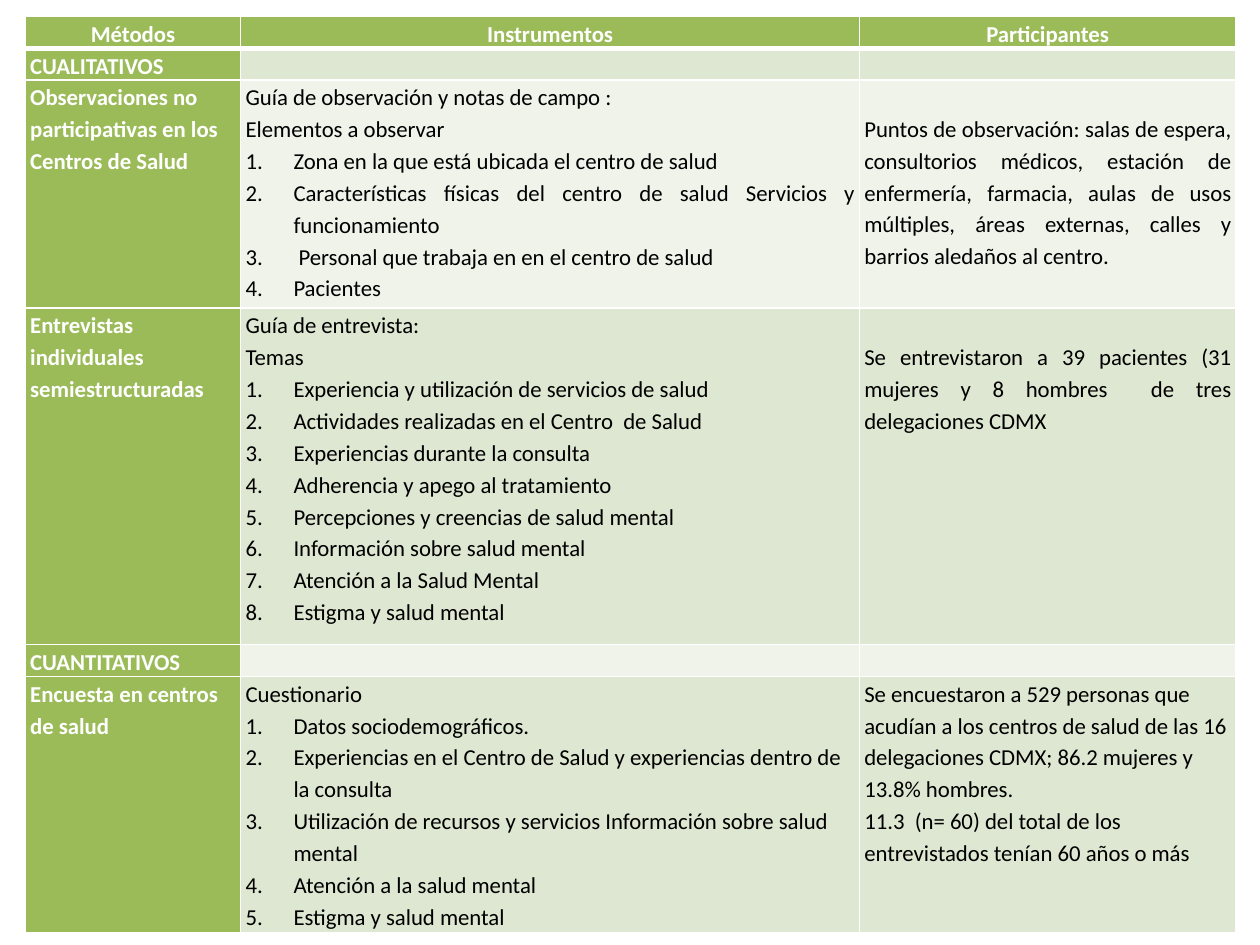
from dataclasses import dataclass

from lxml import etree
from pptx import Presentation
from pptx import util as u
from pptx.dml.color import RGBColor
from pptx.enum import text
from pptx.oxml import ns

LEFT, CENTER, JUSTIFY = text.PP_ALIGN.LEFT, text.PP_ALIGN.CENTER, text.PP_ALIGN.JUSTIFY


@dataclass(frozen=True)
class Theme:
    font: str = "Calibri"
    size: int = 13
    spacing: float = 1.15
    green: str = "9BBB59"
    bands: tuple = ("DEE7D1", "EFF3EA")
    white: str = "FFFFFF"
    black: str = "000000"
    border: float = 1
    header_border: float = 3
    margin: float = 0.04
    indent: float = 0.38
    blank_line: float = 0.25


@dataclass
class Cell:
    """Plain paragraphs followed by numbered ones."""
    plain: tuple = ()
    numbered: tuple = ()
    align: int = LEFT
    top: float = 0


class Deck:
    def __init__(self, theme):
        self.theme = theme
        self.prs = Presentation()
        self.prs.slide_width, self.prs.slide_height = u.Inches(10), u.Inches(7.5)
        self.s = self.prs.slides.add_slide(self.prs.slide_layouts[6])

    def table(self, left, top, widths, heights, rows):
        frame = self.s.shapes.add_table(
            len(rows), len(widths), u.Inches(left), u.Inches(top),
            u.Inches(sum(widths)), u.Inches(sum(heights)))
        tbl = frame.table
        for col, width in zip(tbl.columns, widths):
            col.width = u.Inches(width)
        for row, height in zip(tbl.rows, heights):
            row.height = u.Inches(height)
        for i, row in enumerate(rows):
            for j, content in enumerate(row):
                self.cell(tbl.cell(i, j), content, i, j)

    def cell(self, cell, content, i, j):
        t = self.theme
        heading = i == 0 or j == 0
        cell.margin_left = cell.margin_right = u.Inches(t.margin)
        cell.margin_top, cell.margin_bottom = u.Inches(content.top), 0
        cell.fill.solid()
        fill = t.green if heading else t.bands[(i - 1) % 2]
        cell.fill.fore_color.rgb = RGBColor.from_string(fill)
        self.borders(cell, i)

        tf = cell.text_frame
        tf.text = "\n".join(content.plain + content.numbered)
        for n, p in enumerate(tf.paragraphs):
            p.alignment = content.align
            p.line_spacing = t.spacing
            if n >= len(content.plain) and content.numbered:
                self.number(p)
            for r in p.runs:
                r.font.name, r.font.size, r.font.bold = t.font, u.Pt(t.size), heading
                r.font.color.rgb = RGBColor.from_string(t.white if heading else t.black)
            if not p.runs:  # keeps empty cells as low as one line of text
                etree.SubElement(p._p, ns.qn("a:endParaRPr"), sz=str(t.size * 100))

    def borders(self, cell, i):
        t = self.theme
        tcPr = cell._tc.get_or_add_tcPr()
        for n, side in enumerate(("lnL", "lnR", "lnT", "lnB")):
            thick = (i, side) in ((0, "lnB"), (1, "lnT"))
            width = t.header_border if thick else t.border
            ln = etree.Element(ns.qn("a:" + side), w=str(u.Pt(width)))
            fill = etree.SubElement(ln, ns.qn("a:solidFill"))
            etree.SubElement(fill, ns.qn("a:srgbClr"), val=t.white)
            tcPr.insert(n, ln)

    def number(self, p):
        indent = u.Inches(self.theme.indent)
        pPr = p._p.get_or_add_pPr()
        pPr.set("marL", str(indent))
        pPr.set("indent", str(-indent))
        etree.SubElement(pPr, ns.qn("a:buAutoNum"), type="arabicPeriod")


def main():
    theme = Theme()
    deck = Deck(theme)

    # Column headings
    header = [Cell((name,), align=CENTER)
              for name in ("Métodos", "Instrumentos", "Participantes")]

    # Qualitative methods
    observation = [
        Cell(("Observaciones no participativas en los Centros de Salud",)),
        Cell(("Guía de observación y notas de campo :", "Elementos a observar"),
             ("Zona en la que está ubicada el centro de salud",
              "Características físicas del centro de salud Servicios y funcionamiento",
              " Personal que trabaja en en el centro de salud",
              "Pacientes"), JUSTIFY),
        Cell(("Puntos de observación: salas de espera, consultorios médicos, "
              "estación de enfermería, farmacia, aulas de usos múltiples, "
              "áreas externas, calles y barrios aledaños al centro.",),
             align=JUSTIFY, top=theme.blank_line),
    ]
    interviews = [
        Cell(("Entrevistas individuales semiestructuradas",)),
        Cell(("Guía de entrevista:", "Temas"),
             ("Experiencia y utilización de servicios de salud",
              "Actividades realizadas en el Centro  de Salud",
              "Experiencias durante la consulta",
              "Adherencia y apego al tratamiento",
              "Percepciones y creencias de salud mental",
              "Información sobre salud mental",
              "Atención a la Salud Mental",
              "Estigma y salud mental"), JUSTIFY),
        Cell(("Se entrevistaron a 39 pacientes (31 mujeres y 8 hombres  "
              "de tres delegaciones CDMX",),
             align=JUSTIFY, top=theme.blank_line),
    ]

    # Quantitative methods
    survey = [
        Cell(("Encuesta en centros de salud",)),
        Cell(("Cuestionario",),
             ("Datos sociodemográficos.",
              "Experiencias en el Centro de Salud y experiencias dentro de la consulta",
              "Utilización de recursos y servicios Información sobre salud mental",
              "Atención a la salud mental",
              "Estigma y salud mental")),
        Cell(("Se encuestaron a 529 personas que acudían a los centros de salud de "
              "las 16 delegaciones CDMX; 86.2 mujeres y 13.8% hombres.",
              "11.3  (n= 60) del total de los entrevistados tenían 60 años o más")),
    ]

    # Methods table
    deck.table(
        0.2, 0.13, (1.71, 4.91, 2.99), (0.25, 0.25, 1.81, 2.67, 0.25, 2.03),
        [header,
         [Cell(("CUALITATIVOS",)), Cell(), Cell()], observation, interviews,
         [Cell(("CUANTITATIVOS",)), Cell(), Cell()], survey])

    deck.prs.save("out.pptx")


if __name__ == "__main__":
    main()
